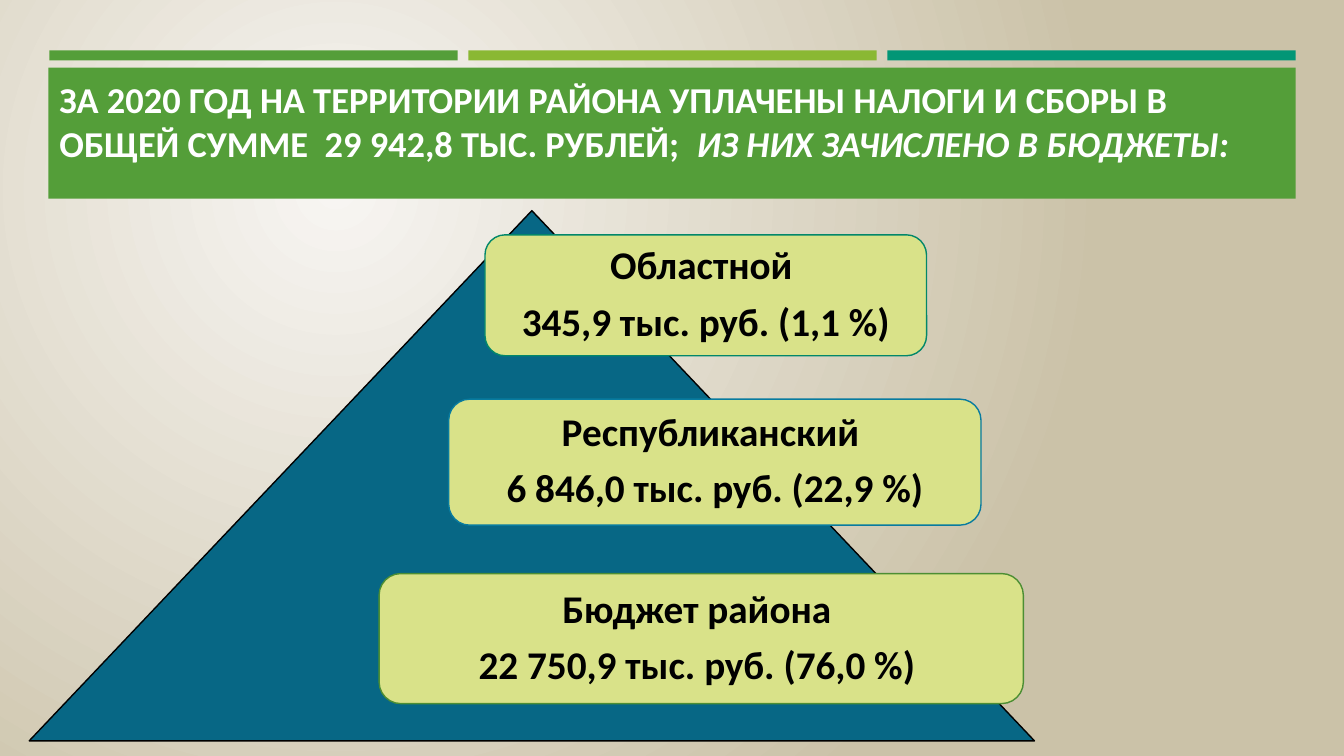
from lxml.etree import SubElement
from pptx import Presentation
from pptx.dml.color import RGBColor
from pptx.enum.shapes import MSO_SHAPE as Shape
from pptx.enum.text import MSO_ANCHOR as Anchor, PP_ALIGN as Align
from pptx.oxml.ns import qn
from pptx.util import Inches, Pt

GREEN = RGBColor(0x54, 0x9E, 0x39)
LIME = RGBColor(0x8A, 0xB8, 0x33)
TEAL = RGBColor(0x02, 0x96, 0x76)
BLUE = RGBColor(0x07, 0x67, 0x85)
PALE = RGBColor(0xD9, 0xE2, 0x89)
SAND = RGBColor(0xCB, 0xC2, 0xA8)
CREAM = RGBColor(0xF7, 0xF5, 0xF2)
WHITE = RGBColor(0xFF, 0xFF, 0xFF)
BLACK = RGBColor(0, 0, 0)
TEAL_EDGE = RGBColor(0x02, 0x87, 0x6A)
BLUE_EDGE = RGBColor(0x08, 0x7B, 0x9F)
GREEN_EDGE = RGBColor(0x4C, 0x8E, 0x33)

TITLE = [
    ("ЗА 2020 ГОД НА ТЕРРИТОРИИ РАЙОНА УПЛАЧЕНЫ НАЛОГИ И СБОРЫ В "
     "ОБЩЕЙ СУММЕ  29 942,8 ТЫС. РУБЛЕЙ;  ", False),
    ("ИЗ НИХ ЗАЧИСЛЕНО В БЮДЖЕТЫ:", True),
]
BUDGETS = [
    ((4.81, 2.33, 4.38, 1.2), TEAL_EDGE,
     ["Областной ", "345,9 тыс. руб. (1,1 %)"]),
    ((4.45, 3.96, 5.28, 1.25), BLUE_EDGE,
     ["Республиканский ", "6 846,0 тыс. руб. (22,9 %)"]),
    ((3.76, 5.69, 6.39, 1.29), GREEN_EDGE,
     ["Бюджет района ", "22 750,9 тыс. руб. (76,0 %) "]),
]


class Deck:
    font = "Calibri"

    def __init__(self):
        self.prs = Presentation()
        self.prs.slide_width = Inches(13.33)
        self.prs.slide_height = Inches(7.5)
        self.slide = self.prs.slides.add_slide(self.prs.slide_layouts[6])

    def glow(self, inner, outer):
        """Fill the background with a circular gradient, brightest at upper left."""
        fill = self.slide.background.fill
        fill.gradient()
        for stop, color in zip(fill.gradient_stops, (inner, outer)):
            stop.color.rgb = color
        grad = self.slide.element.find(".//" + qn("a:gradFill"))
        grad.remove(grad.find(qn("a:lin")))
        ring = SubElement(grad, qn("a:path"), {"path": "circle"})
        SubElement(ring, qn("a:fillToRect"),
                   {"l": "50000", "t": "50000", "r": "100000", "b": "100000"})

    def block(self, kind, box, fill, edge=None):
        shape = self.slide.shapes.add_shape(kind, *map(Inches, box))
        shape.shadow.inherit = False
        shape.fill.solid()
        shape.fill.fore_color.rgb = fill
        if edge is None:
            shape.line.fill.background()
        else:
            shape.line.color.rgb = edge
            shape.line.width = Pt(1)
        return shape

    def style(self, para, size, color, align):
        para.alignment = align
        para.font.name = self.font
        para.font.size = Pt(size)
        para.font.bold = True
        para.font.color.rgb = color

    def title(self, box, parts):
        frame = self.block(Shape.RECTANGLE, box, GREEN).text_frame
        frame.word_wrap = True
        frame.vertical_anchor = Anchor.TOP
        frame.margin_left = Inches(0.11)
        frame.margin_top = Inches(0.1)
        para = frame.paragraphs[0]
        self.style(para, 26, WHITE, Align.LEFT)
        for text, slant in parts:
            run = para.add_run()
            run.text = text
            run.font.italic = slant

    def card(self, box, edge, lines):
        frame = self.block(Shape.ROUNDED_RECTANGLE, box, PALE, edge).text_frame
        frame.word_wrap = True
        frame.vertical_anchor = Anchor.MIDDLE
        frame.text = "\n".join(lines)
        for para in frame.paragraphs:
            self.style(para, 28, BLACK, Align.CENTER)
            para.line_spacing = 0.9
            para.space_after = Pt(9.8)


def main():
    deck = Deck()
    deck.glow(CREAM, SAND)
    for i, color in enumerate((GREEN, LIME, TEAL)):
        deck.block(Shape.RECTANGLE, (0.49 + 4.155 * i, 0.5, 4.05, 0.1), color)
    deck.title((0.48, 0.67, 12.37, 1.3), TITLE)
    deck.block(Shape.ISOSCELES_TRIANGLE, (0.29, 2.09, 9.97, 5.26), BLUE, BLACK)
    for budget in BUDGETS:
        deck.card(*budget)
    deck.prs.save("out.pptx")


if __name__ == "__main__":
    main()
